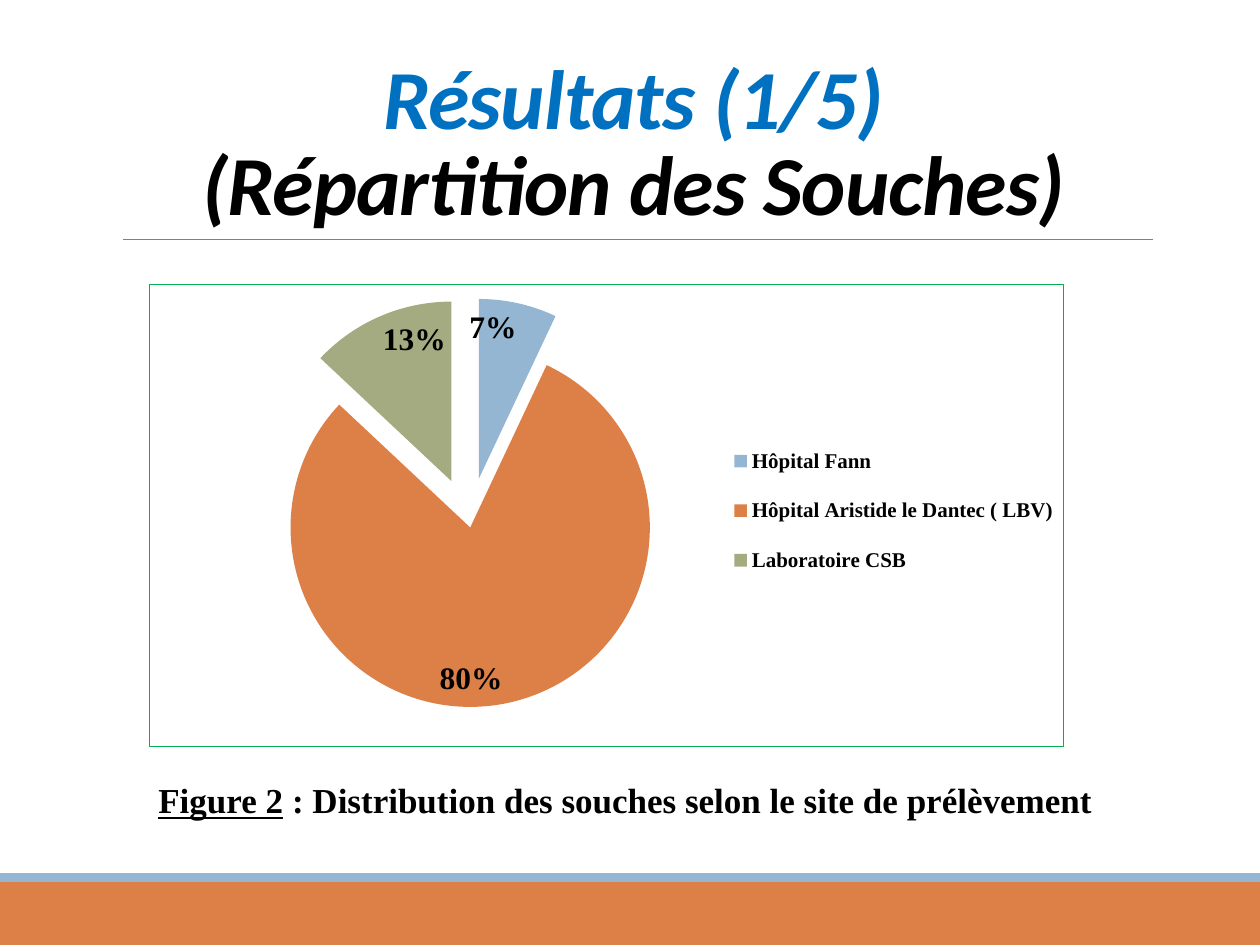
from dataclasses import dataclass
from typing import Any
from lxml.etree import SubElement as Sub
from pptx import Presentation
from pptx.chart.data import CategoryChartData as Data
from pptx.dml.color import RGBColor as Rgb
from pptx.enum.chart import XL_CHART_TYPE as Kind, XL_LABEL_POSITION as Spot, XL_LEGEND_POSITION as Side
from pptx.enum.shapes import MSO_CONNECTOR as Link, MSO_SHAPE as Form
from pptx.enum.text import MSO_ANCHOR as Anchor, MSO_AUTO_SIZE as Fit, PP_ALIGN as Align
from pptx.oxml import parse_xml
from pptx.oxml.ns import nsdecls, qn
from pptx.util import Pt


@dataclass(frozen=True)
class Theme:
    blue: str = "94B6D2"
    orange: str = "DD8047"
    olive: str = "A5AB81"
    head: str = "0070C0"
    ink: str = "000000"
    rule: str = "808080"
    frame: str = "00B050"
    sans: str = "Calibri"
    serif: str = "Times New Roman"
    title: float = 48
    note: float = 20
    label: float = 18
    key: float = 12


@dataclass(frozen=True)
class Box:
    left: float
    top: float
    width: float
    height: float

    def pts(self) -> list:
        return [Pt(v) for v in (self.left, self.top, self.width, self.height)]


@dataclass(frozen=True)
class Band:
    box: Box
    color: str


@dataclass(frozen=True)
class Slice:
    name: str
    share: int
    color: str
    pull: int


T = Theme()
BANDS = [
    Band(Box(0, 504, 720, 36), T.orange),
    Band(Box(0, 499, 720, 5), T.blue),
]
SLICES = [
    Slice("Hôpital Fann", 7, T.blue, 25),
    Slice("Hôpital Aristide le Dantec ( LBV)", 80, T.orange, 3),
    Slice("Laboratoire CSB", 13, T.olive, 25),
]
HEAD = {"name": T.sans, "size": Pt(T.title), "bold": True, "italic": True}
NOTE = {"name": T.serif, "size": Pt(T.note), "bold": True}
KEY = {"name": T.serif, "size": Pt(T.key), "bold": True}
LABEL = KEY | {"size": Pt(T.label)}


def apply(item: Any, form: dict) -> None:
    for key, val in form.items():
        setattr(item, key, val)


def ink(font: Any, form: dict, color: str = T.ink) -> None:
    apply(font, form)
    font.color.rgb = Rgb.from_string(color)


def paint(fill: Any, color: str) -> None:
    fill.solid()
    fill.fore_color.rgb = Rgb.from_string(color)


def draw_band(slide: Any, band: Band) -> None:
    shape = slide.shapes.add_shape(Form.RECTANGLE, *band.box.pts())
    shape.shadow.inherit = False
    paint(shape.fill, band.color)
    shape.line.fill.background()


def draw_rule(slide: Any) -> None:
    rule = slide.shapes.add_connector(Link.STRAIGHT, Pt(70.5), Pt(137), Pt(659), Pt(137))
    rule.line.color.rgb = Rgb.from_string(T.rule)
    rule.line.width = Pt(0.5)
    Sub(rule._element.spPr, qn("a:effectLst"))


def draw_title(slide: Any) -> None:
    title = slide.shapes.title
    apply(title, dict(zip(("left", "top", "width", "height"), Box(65, 22, 594, 114.5).pts())))
    frame = title.text_frame
    apply(frame, {"vertical_anchor": Anchor.BOTTOM, "word_wrap": True, "auto_size": Fit.NONE})
    para = frame.paragraphs[0]
    apply(para, {"alignment": Align.CENTER, "line_spacing": 0.85})
    for text, color in (("Résultats (1/5)", T.head), ("(Répartition des Souches)", T.ink)):
        if para.runs:
            para.add_line_break()
        run = para.add_run()
        run.text = text
        ink(run.font, HEAD, color)
        run.font._element.set("spc", "-50")


def draw_note(slide: Any) -> None:
    frame = slide.shapes.add_textbox(*Box(0, 441.5, 720, 53).pts()).text_frame
    apply(frame, {"word_wrap": True, "auto_size": Fit.SHAPE_TO_FIT_TEXT})
    para = frame.paragraphs[0]
    para.alignment = Align.CENTER
    for text, under in (("Figure 2", True), (" : Distribution des souches selon le site de prélèvement ", False)):
        run = para.add_run()
        run.text = text
        ink(run.font, NOTE | {"underline": under})


def set_area(node: Any, spot: int, area: Box, inner: bool = False) -> None:
    for old in node.findall(qn("c:layout")):
        node.remove(old)
    layout = parse_xml(f"<c:layout {nsdecls('c')}><c:manualLayout/></c:layout>")
    parts = {"layoutTarget": "inner"} if inner else {}
    parts |= {"xMode": "edge", "yMode": "edge", "x": area.left, "y": area.top, "w": area.width, "h": area.height}
    for tag, val in parts.items():
        Sub(layout[0], qn(f"c:{tag}")).set("val", str(val))
    node.insert(spot, layout)


def pull_out(node: Any, pull: int, mark: str = "c:spPr") -> None:
    node.find(qn(mark)).addprevious(parse_xml(f'<c:explosion {nsdecls("c")} val="{pull}"/>'))


def draw_pie(slide: Any) -> None:
    data = Data()
    data.categories = [s.name for s in SLICES]
    data.add_series("Series 1", [s.share for s in SLICES])
    chart = slide.shapes.add_chart(Kind.PIE, *Box(85, 162, 523, 265).pts(), data).chart
    apply(chart, {"has_title": False, "has_legend": True})
    ink(chart.font, KEY)
    apply(chart.legend, {"position": Side.RIGHT, "include_in_layout": True})
    ink(chart.legend.font, KEY)
    root = chart._chartSpace
    set_area(root.chart.plotArea, 0, Box(0.01, 0.03, 0.68, 0.97), True)
    set_area(chart.legend._element, 1, Box(0.64, 0.3, 0.36, 0.38))
    root.chart.addnext(parse_xml(
        f'<c:spPr {nsdecls("c", "a")}><a:noFill/><a:ln w="{Pt(0.75)}"><a:solidFill>'
        f'<a:srgbClr val="{T.frame}"/></a:solidFill></a:ln></c:spPr>'))
    plot = chart.plots[0]
    apply(plot, {"vary_by_categories": True, "has_data_labels": True})
    tags = plot.data_labels
    apply(tags, {"show_percentage": True, "show_value": False, "number_format": "0%",
                 "number_format_is_linked": False, "position": Spot.INSIDE_END})
    ink(tags.font, LABEL)
    series = plot.series[0]
    for num, part in enumerate(SLICES):
        paint(series.points[num].format.fill, part.color)
    for node, part in zip(series._element.findall(qn("c:dPt")), SLICES):
        pull_out(node, part.pull)
    pull_out(series._element, max(s.pull for s in SLICES), "c:dPt")


def main() -> None:
    deck = Presentation()
    apply(deck, {"slide_width": Pt(720), "slide_height": Pt(540)})
    slide = deck.slides.add_slide(deck.slide_layouts[5])
    for band in BANDS:
        draw_band(slide, band)
    draw_rule(slide)
    draw_title(slide)
    draw_note(slide)
    draw_pie(slide)
    deck.save("out.pptx")


if __name__ == "__main__":
    main()
